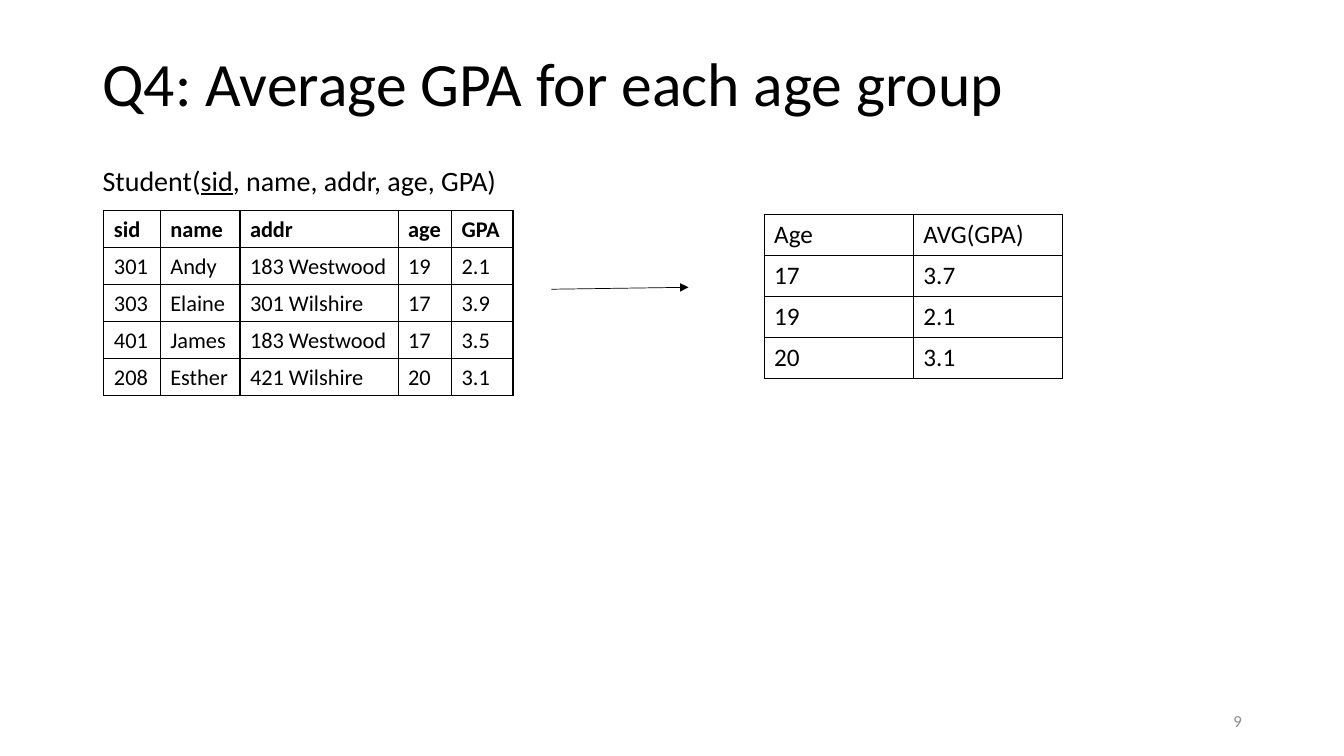
"""Build the slide on averaging GPA for each age group."""
from dataclasses import dataclass

import lxml.etree
import pptx
import pptx.dml.color
import pptx.enum.shapes
import pptx.enum.text
import pptx.oxml.ns
import pptx.util

Pt = pptx.util.Pt
qn = pptx.oxml.ns.qn
Align = pptx.enum.text.PP_ALIGN
Anchor = pptx.enum.text.MSO_ANCHOR


@dataclass(frozen=True)
class Theme:
    font: str = "Calibri"
    ink: str = "000000"
    muted: str = "8C8C8C"
    title: float = 44
    schema: float = 20
    student: float = 16
    average: float = 18
    number: float = 12
    border: float = 1
    arrow: float = 0.5


@dataclass(frozen=True)
class Label:
    runs: tuple[str, ...]
    box: tuple[float, float, float, float]
    size: float
    color: str
    anchor: Anchor = Anchor.MIDDLE
    align: Align = Align.LEFT
    line_spacing: float = 1.0
    wrap: bool = True
    underlined: str = ""


@dataclass(frozen=True)
class Relation:
    rows: tuple[tuple[str, ...], ...]
    left: float
    top: float
    widths: tuple[float, ...]
    row_height: float
    size: float
    bold_header: bool = False


THEME = Theme()

LABELS = (
    Label(("Q4: Average GPA for each age group",), (66.2, 28.8, 828, 65.5),
          THEME.title, THEME.ink, line_spacing=0.9),
    Label(("Student(", "sid", ", name, addr, age, GPA)"), (66.2, 113, 299.5, 31),
          THEME.schema, THEME.ink, anchor=Anchor.TOP, wrap=False, underlined="sid"),
    Label(("9",), (678.2, 500.4, 216, 28.8), THEME.number, THEME.muted,
          align=Align.RIGHT),
)

RELATIONS = (
    Relation(
        (
            ("sid", "name", "addr", "age", "GPA"),
            ("301", "Andy", "183 Westwood", "19", "2.1"),
            ("303", "Elaine", "301 Wilshire", "17", "3.9"),
            ("401", "James", "183 Westwood", "17", "3.5"),
            ("208", "Esther", "421 Wilshire", "20", "3.1"),
        ),
        74.2, 150.5, (40.3, 56.9, 113, 38.2, 43.9), 26.4, THEME.student,
        bold_header=True,
    ),
    Relation(
        (("Age", "AVG(GPA)"), ("17", "3.7"), ("19", "2.1"), ("20", "3.1")),
        545.8, 153.4, (106.6, 106.6), 29.3, THEME.average,
    ),
)


def style_run(run, size: float, color: str) -> None:
    run.font.name = THEME.font
    run.font.size = Pt(size)
    run.font.color.rgb = pptx.dml.color.RGBColor.from_string(color)


def draw_label(slide, label: Label) -> None:
    frame = slide.shapes.add_textbox(*map(Pt, label.box)).text_frame
    frame.word_wrap = label.wrap
    frame.vertical_anchor = label.anchor
    paragraph = frame.paragraphs[0]
    paragraph.alignment = label.align
    paragraph.line_spacing = label.line_spacing
    for text in label.runs:
        run = paragraph.add_run()
        run.text = text
        style_run(run, label.size, label.color)
        run.font.underline = text == label.underlined


def add_borders(cell) -> None:
    properties = cell._tc.get_or_add_tcPr()
    for position, side in enumerate(("lnL", "lnR", "lnT", "lnB")):
        line = lxml.etree.Element(qn(f"a:{side}"), w=str(Pt(THEME.border)))
        fill = lxml.etree.SubElement(line, qn("a:solidFill"))
        lxml.etree.SubElement(fill, qn("a:srgbClr"), val=THEME.ink)
        properties.insert(position, line)


def draw_relation(slide, relation: Relation) -> None:
    row_count = len(relation.rows)
    table = slide.shapes.add_table(
        row_count, len(relation.widths), Pt(relation.left), Pt(relation.top),
        Pt(sum(relation.widths)), Pt(relation.row_height * row_count),
    ).table
    table.first_row = False
    table.horz_banding = False
    for column, width in zip(table.columns, relation.widths):
        column.width = Pt(width)
    for row_index, values in enumerate(relation.rows):
        table.rows[row_index].height = Pt(relation.row_height)
        for column_index, value in enumerate(values):
            cell = table.cell(row_index, column_index)
            cell.fill.background()
            add_borders(cell)
            cell.text_frame.text = value
            run = cell.text_frame.paragraphs[0].runs[0]
            style_run(run, relation.size, THEME.ink)
            run.font.bold = relation.bold_header and row_index == 0


def draw_arrow(slide, start: tuple[float, float], end: tuple[float, float]) -> None:
    arrow = slide.shapes.add_connector(
        pptx.enum.shapes.MSO_CONNECTOR.STRAIGHT, *map(Pt, start + end))
    arrow.line.width = Pt(THEME.arrow)
    arrow.line.color.rgb = pptx.dml.color.RGBColor.from_string(THEME.ink)
    lxml.etree.SubElement(arrow.line._get_or_add_ln(), qn("a:tailEnd"), type="triangle")
    lxml.etree.SubElement(arrow._element.spPr, qn("a:effectLst"))


def main() -> None:
    presentation = pptx.Presentation()
    presentation.slide_width = Pt(960)
    presentation.slide_height = Pt(540)
    slide = presentation.slides.add_slide(presentation.slide_layouts[6])
    for label in LABELS:
        draw_label(slide, label)
    for relation in RELATIONS:
        draw_relation(slide, relation)
    draw_arrow(slide, (393.8, 206.6), (491.8, 205.2))
    presentation.save("out.pptx")


if __name__ == "__main__":
    main()
